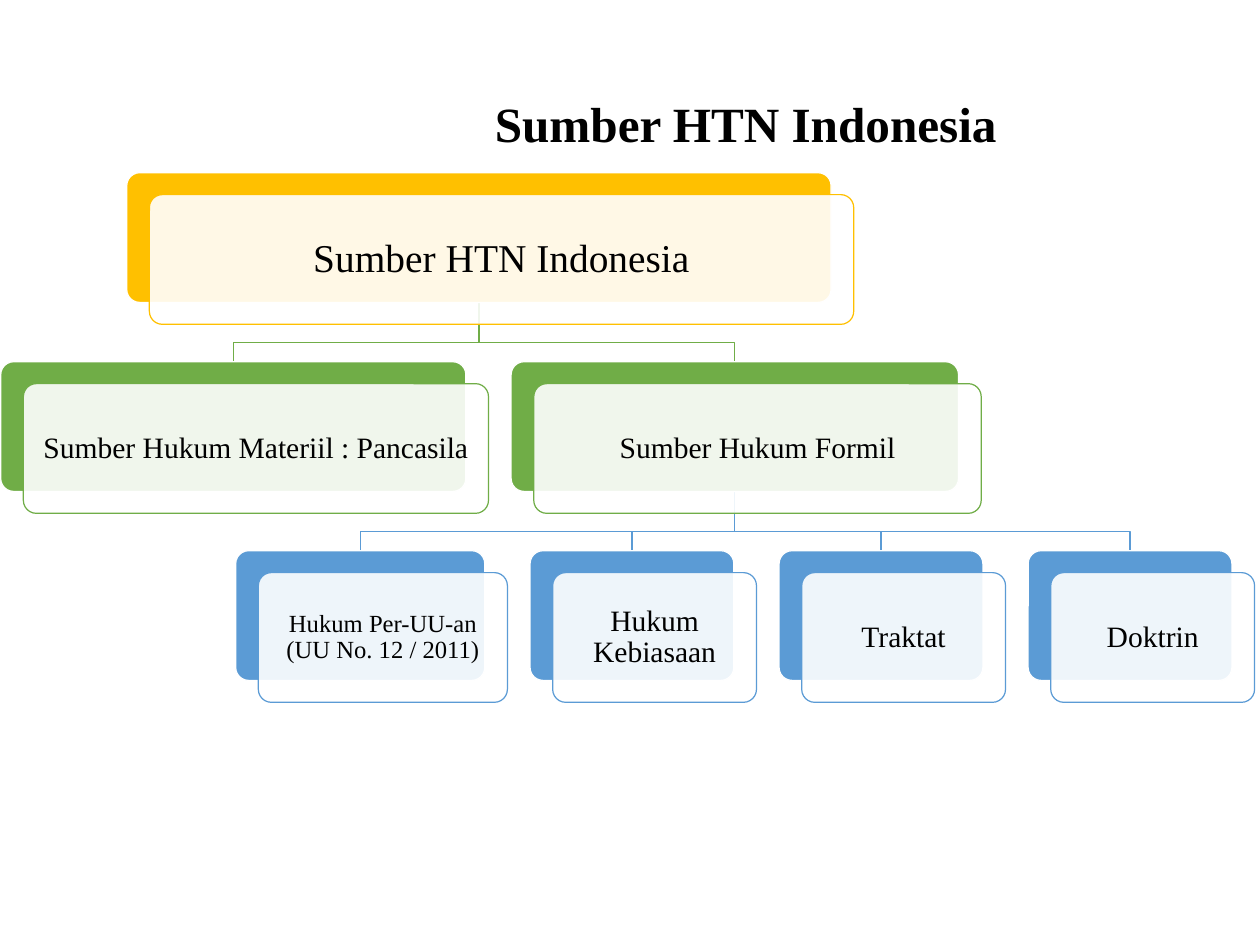
import pptx
import pptx.util
import pptx.dml.color
import pptx.enum.shapes
import pptx.enum.text
import pptx.oxml
import pptx.oxml.ns

Pt = pptx.util.Pt
FONT = "Times New Roman"
COLOURS = {"gold": "FFC000", "green": "70AD47", "blue": "5B9BD5",
           "white": "FFFFFF", "black": "000000"}

TITLE = "Sumber HTN Indonesia"
# Each card: text, width, font size, inset
LEVELS = [
    {"colour": "gold", "left": 103, "cards": [
        ("Sumber HTN Indonesia", 572.4, 32, 9.6)]},
    {"colour": "green", "left": 0.6, "cards": [
        ("Sumber Hukum Materiil : Pancasila", 378, 24, 7.2),
        ("Sumber Hukum Formil", 363.6, 24, 7.2)]},
    {"colour": "blue", "left": 191.6, "cards": [
        ("Hukum Per-UU-an (UU No. 12 / 2011)", 202.4, 20, 6),
        ("Hukum Kebiasaan", 165.6, 24, 7.2),
        ("Traktat", 165.6, 24, 7.2),
        ("Doktrin", 165.6, 24, 7.2)]},
]
LEVEL_PARENT_INDEX = {1: 0, 2: 1}

FIRST_TOP, LEVEL_STEP, CARD_HEIGHT, CARD_GAP = 140.4, 153.6, 105.4, 36.8
FRONT_SHIFT_X, FRONT_SHIFT_Y = 18.4, 17.8
ELBOW_DROP = 32.4


def rgb(name):
    return pptx.dml.color.RGBColor.from_string(COLOURS[name])


def card_lefts(level):
    lefts, left = [], level["left"]
    for _, width, _, _ in level["cards"]:
        lefts.append(left)
        left += width + CARD_GAP
    return lefts


def card_centres(level):
    return [left + card[1] / 2
            for left, card in zip(card_lefts(level), level["cards"])]


def level_top(index):
    return FIRST_TOP + index * LEVEL_STEP


def add_text(shape, text, size, bold=False):
    paragraph = shape.text_frame.paragraphs[0]
    paragraph.alignment = pptx.enum.text.PP_ALIGN.CENTER
    run = paragraph.add_run()
    run.text = text
    run.font.name = FONT
    run.font.size = Pt(size)
    run.font.bold = bold
    run.font.color.rgb = rgb("black")
    return paragraph


def add_elbow(slide, start_x, end_x, top, bottom, colour):
    corner_y = top + ELBOW_DROP
    points = [(start_x, corner_y), (end_x, corner_y), (end_x, bottom)]
    builder = slide.shapes.build_freeform(Pt(start_x), Pt(top))
    builder.add_line_segments([(Pt(x), Pt(y)) for x, y in points], close=False)
    elbow = builder.convert_to_shape()
    elbow.shadow.inherit = False
    elbow.fill.background()
    elbow.line.color.rgb = rgb(colour)
    elbow.line.width = Pt(1)


def add_panel(slide, left, top, width, fill, line):
    panel = slide.shapes.add_shape(
        pptx.enum.shapes.MSO_SHAPE.ROUNDED_RECTANGLE,
        Pt(left), Pt(top), Pt(width), Pt(CARD_HEIGHT))
    panel.adjustments[0] = 0.1
    panel.shadow.inherit = False
    panel.fill.solid()
    panel.fill.fore_color.rgb = rgb(fill)
    panel.line.color.rgb = rgb(line)
    panel.line.width = Pt(1)
    return panel


def add_card(slide, left, top, card, colour):
    """Add a coloured back panel and a shifted, nearly opaque text panel."""
    text, width, size, inset = card
    add_panel(slide, left, top, width, colour, "white")
    front = add_panel(slide, left + FRONT_SHIFT_X, top + FRONT_SHIFT_Y,
                      width, "white", colour)
    fill_colour = front.fill._xPr.find(".//" + pptx.oxml.ns.qn("a:srgbClr"))
    fill_colour.append(pptx.oxml.parse_xml(
        f'<a:alpha {pptx.oxml.ns.nsdecls("a")} val="90000"/>'))
    frame = front.text_frame
    frame.word_wrap = True
    frame.vertical_anchor = pptx.enum.text.MSO_ANCHOR.MIDDLE
    frame.margin_left = frame.margin_right = Pt(inset)
    frame.margin_top = frame.margin_bottom = Pt(inset)
    add_text(front, text, size).line_spacing = 0.9


def main():
    presentation = pptx.Presentation()
    presentation.slide_width = Pt(1024)
    presentation.slide_height = Pt(768)
    slide = presentation.slides.add_slide(presentation.slide_layouts[6])

    title = slide.shapes.add_textbox(Pt(172), Pt(72), Pt(868), Pt(55.4))
    title.text_frame.word_wrap = True
    add_text(title, TITLE, 40, bold=True)

    for index, parent_index in LEVEL_PARENT_INDEX.items():
        level = LEVELS[index]
        start_x = card_centres(LEVELS[index - 1])[parent_index]
        for end_x in card_centres(level):
            add_elbow(slide, start_x, end_x, level_top(index - 1) + CARD_HEIGHT,
                      level_top(index), level["colour"])

    for index, level in enumerate(LEVELS):
        for left, card in zip(card_lefts(level), level["cards"]):
            add_card(slide, left, level_top(index), card, level["colour"])

    presentation.save("out.pptx")


if __name__ == "__main__":
    main()
